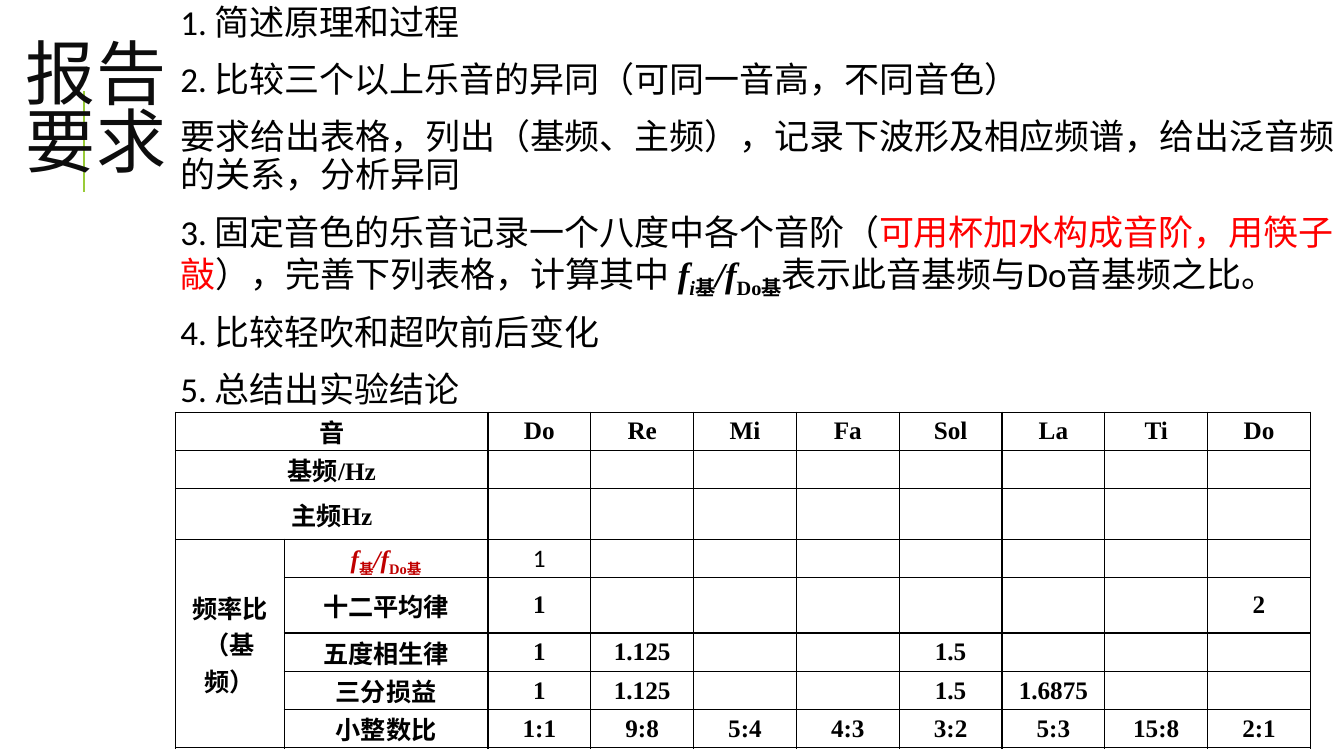
from lxml import etree
from pptx import Presentation
from pptx.dml.color import RGBColor
from pptx.enum import shapes, text
from pptx.oxml import ns
from pptx.util import Inches, Pt

COLORS = {"ink": "000000", "heading": "0D0D0D", "accent": "99CB38", "alert": "FF0000", "ratio": "C00000"}
SANS, SERIF = "Calibri", "Times New Roman"


def write(paragraph, words, size=18, font=SERIF, color="ink", bold=False, italic=False, base=0, spacing=0):
    run = paragraph.add_run()
    run.text = words
    run.font.size, run.font.name = Pt(size), font
    run.font.bold, run.font.italic = bold, italic
    run.font.color.rgb = RGBColor.from_string(COLORS[color])
    properties = run.font._element
    if base:
        properties.set("baseline", str(base * 1000))
    if spacing:
        properties.set("spc", str(spacing * 100))


def ratio(first, subscript, **style):
    return [
        (first, dict(style, italic=True)),
        *subscript(style),
        ("/f", dict(style, italic=True)),
        ("Do基", dict(style, base=-25)),
    ]


class ReportSlide:
    def __init__(self, deck):
        self.slide = deck.slides.add_slide(deck.slide_layouts[5])

    def line(self, start, end, color, width):
        rule = self.slide.shapes.add_connector(
            shapes.MSO_CONNECTOR.STRAIGHT, *map(Inches, start + end))
        rule.line.color.rgb = RGBColor.from_string(COLORS[color])
        rule.line.width = Pt(width)
        etree.SubElement(rule._element.spPr, ns.qn("a:effectLst"))

    def title(self, words, box):
        heading = self.slide.shapes.title
        heading.left, heading.top, heading.width, heading.height = map(Inches, box)
        frame = heading.text_frame
        frame.word_wrap = True
        frame.auto_size = text.MSO_AUTO_SIZE.NONE
        frame.vertical_anchor = text.MSO_ANCHOR.MIDDLE
        paragraph = frame.paragraphs[0]
        paragraph.alignment = text.PP_ALIGN.LEFT
        paragraph.line_spacing = 0.8
        write(paragraph, words, size=50, font=SANS, color="heading", spacing=1)
        tree = self.slide.shapes._spTree
        tree.remove(heading._element)
        tree.append(heading._element)

    def body(self, items, box):
        frame = self.slide.shapes.add_textbox(*map(Inches, box)).text_frame
        frame.word_wrap = True
        frame.margin_left = frame.margin_right = Inches(0.05)
        frame.margin_top = frame.margin_bottom = Inches(0.05)
        for index, item in enumerate(items):
            paragraph = frame.add_paragraph() if index else frame.paragraphs[0]
            paragraph.line_spacing = 0.9
            paragraph.space_before, paragraph.space_after = Pt(12), Pt(2)
            for words, style in item:
                write(paragraph, words, **{"size": 25, "font": SANS, **style})

    def table(self, rows, merges, box, widths, heights):
        grid = self.slide.shapes.add_table(len(heights), len(widths), *map(Inches, box)).table
        grid.first_row = grid.horz_banding = False
        for column, width in zip(grid.columns, widths):
            column.width = Inches(width)
        for row, height in zip(grid.rows, heights):
            row.height = Inches(height)
        for first, last in merges:
            grid.cell(*first).merge(grid.cell(*last))
        for r, row in enumerate(rows):
            for c, content in enumerate(row):
                self.cell(grid.cell(r, c), content)

    def cell(self, cell, content):
        cell.margin_left = cell.margin_right = Inches(0.07)
        cell.margin_top = cell.margin_bottom = 0
        cell.vertical_anchor = text.MSO_ANCHOR.MIDDLE
        properties = cell._tc.get_or_add_tcPr()
        for side in ("lnL", "lnR", "lnT", "lnB"):
            border = etree.SubElement(properties, ns.qn("a:" + side), w=str(Pt(1)))
            fill = etree.SubElement(border, ns.qn("a:solidFill"))
            etree.SubElement(fill, ns.qn("a:srgbClr"), val=COLORS["ink"])
        cell.fill.background()
        if not content:
            return
        if isinstance(content, str):
            lines = [[(words, {"bold": True})] for words in content.split("\n")]
        else:
            lines = [content]
        for index, runs in enumerate(lines):
            paragraph = cell.text_frame.add_paragraph() if index else cell.text_frame.paragraphs[0]
            paragraph.alignment = text.PP_ALIGN.CENTER
            for words, style in runs:
                write(paragraph, words, **style)


def main():
    deck = Presentation()
    deck.slide_width, deck.slide_height = Inches(13.33), Inches(7.5)
    report = ReportSlide(deck)
    report.line((0.83, 1.9), (0.83, 0.9), "accent", 1.5)
    report.title("报告要求", (0.15, 0.4, 1.91, 1.45))

    body_ratio = ratio(
        " f",
        lambda style: [("i", dict(style, italic=True, base=-25)), ("基", dict(style, base=-25))],
        font=SERIF, bold=True)
    table_ratio = ratio(
        "f", lambda style: [("基", dict(style, base=-25))], color="ratio", bold=True)

    report.body([
        [("1. 简述原理和过程", {})],
        [("2. 比较三个以上乐音的异同（可同一音高，不同音色）", {})],
        [("要求给出表格，列出（基频、主频），记录下波形及相应频谱，给出泛音频的关系，分析异同", {})],
        [
            ("3. 固定音色的乐音记录一个八度中各个音阶（", {}),
            ("可用杯加水构成音阶，用筷子敲", {"color": "alert"}),
            ("），完善下列表格，计算其中", {}),
            *body_ratio,
            ("表示此音基频与Do音基频之比。", {}),
        ],
        [("4. 比较轻吹和超吹前后变化", {})],
        [("5. 总结出实验结论", {})],
    ], (1.74, 0, 11.76, 4.76))

    blank = [""] * 8
    report.table(
        [
            ["音", "", "Do", "Re", "Mi", "Fa", "Sol", "La", "Ti", "Do"],
            ["基频/Hz", "", *blank],
            ["主频Hz", "", *blank],
            ["频率比\n（基频）", table_ratio, [("1", {"font": SANS})], *blank[1:]],
            ["", "十二平均律", "1", *blank[2:], "2"],
            ["", "五度相生律", "1", "1.125", "", "", "1.5", "", "", ""],
            ["", "三分损益", "1", "1.125", "", "", "1.5", "1.6875", "", ""],
            ["", "小整数比", "1:1", "9:8", "5:4", "4:3", "3:2", "5:3", "15:8", "2:1"],
        ],
        merges=[((0, 0), (0, 1)), ((1, 0), (1, 1)), ((2, 0), (2, 1)), ((3, 0), (7, 0))],
        box=(1.74, 4.09, 11.23, 3.31),
        widths=[1.08, 2.02] + [1.02] * 8,
        heights=[0.38, 0.38, 0.5, 0.38, 0.55, 0.38, 0.38, 0.38])
    deck.save("out.pptx")


if __name__ == "__main__":
    main()
